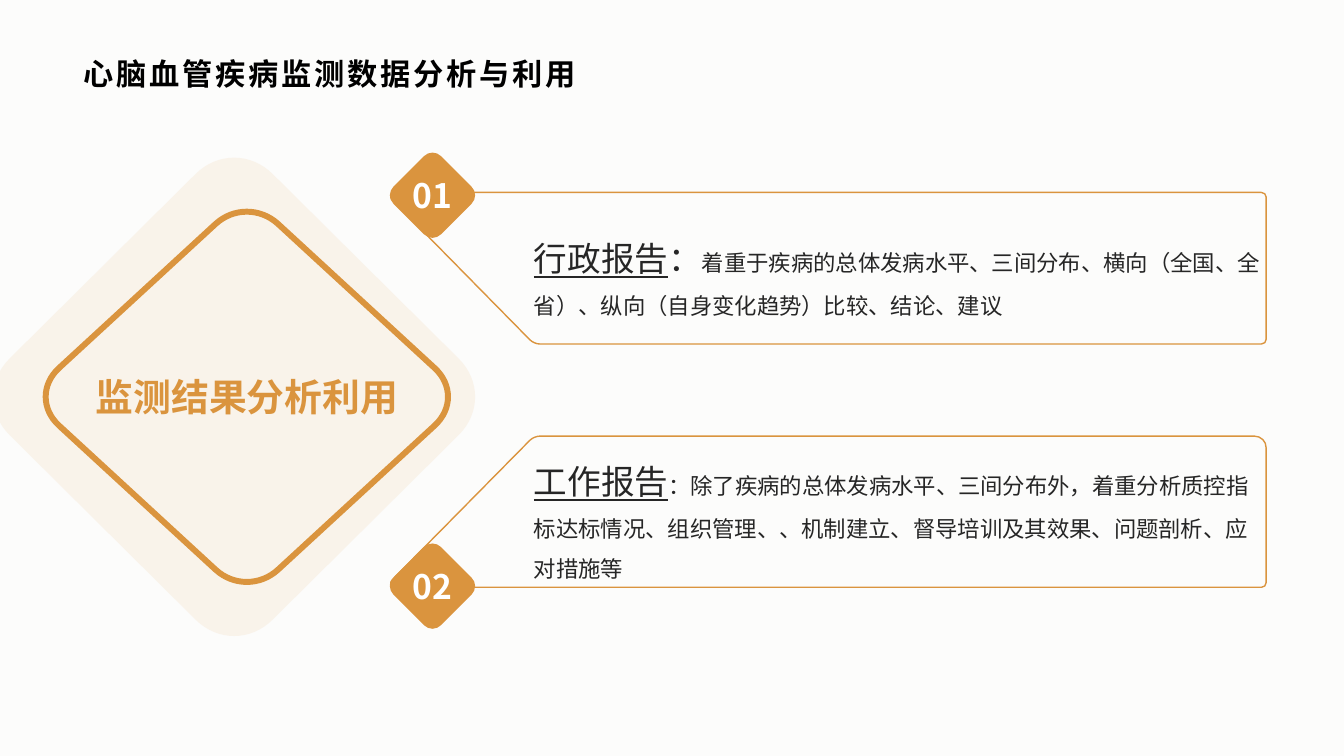
import math
from dataclasses import dataclass

import pptx
import pptx.dml.color
import pptx.enum.text
import pptx.oxml.ns
import pptx.util
from lxml import etree

Cm = pptx.util.Cm
Align = pptx.enum.text.PP_ALIGN
qn = pptx.oxml.ns.qn
COLORS = {"page": "FCFCFB", "accent": "DA943E", "halo": "F4DFC5",
          "title": "000000", "body": "262626", "badge": "FFFFFF"}
CJK_FONT = "Noto Sans CJK SC"
HANDLE = 0.43  # distance of a curve handle from the corner, as a share of the cut


@dataclass
class Corner:
    """Corner of an outline; x, y and the rounded-off length are in cm."""
    x: float
    y: float
    cut: float


@dataclass
class Report:
    number: str
    badge_y: float
    badge_edge: float  # the panel's long edge, beside the badge
    bevel_edge: float  # the panel's short edge
    far_cut: float
    heading: str
    colon_size: float
    text: str


REPORTS = [
    Report("01", 4.92, 4.85, 8.67, 0.12, "行政报告", 24,
           "着重于疾病的总体发病水平、三间分布、横向（全国、全省）、纵向（自身变化趋势）比较、结论、建议"),
    Report("02", 14.77, 14.8, 10.99, 0.3, "工作报告", 16,
           "除了疾病的总体发病水平、三间分布外，着重分析质控指标达标情况、组织管理、、机制建立、"
           "督导培训及其效果、问题剖析、应对措施等"),
]


def rgb(name: str):
    return pptx.dml.color.RGBColor.from_string(COLORS[name])


def toward(corner: Corner, other: Corner, length: float) -> tuple:
    share = length / math.hypot(other.x - corner.x, other.y - corner.y)
    return (Cm(corner.x + (other.x - corner.x) * share),
            Cm(corner.y + (other.y - corner.y) * share))


def corner_curves(corners: list) -> list:
    """Return start, two handles and end of the cubic curve at each corner."""
    curves = []
    for index, corner in enumerate(corners):
        before, after = corners[index - 1], corners[(index + 1) % len(corners)]
        curves.append([toward(corner, before, corner.cut),
                       toward(corner, before, corner.cut * HANDLE),
                       toward(corner, after, corner.cut * HANDLE),
                       toward(corner, after, corner.cut)])
    return curves


def curve_middle(curve: list) -> tuple:
    return tuple(round((a + 3 * b + 3 * c + d) / 8) for a, b, c, d in zip(*curve))


def diamond(x: float, y: float, half_width: float, half_height: float, cut: float) -> list:
    return [Corner(x - half_width, y, cut), Corner(x, y - half_height, cut),
            Corner(x + half_width, y, cut), Corner(x, y + half_height, cut)]


def build_rounded(page, corners: list):
    """Build the outline through the curve middles, then bend it into true curves."""
    curves = corner_curves(corners)
    points = [point for curve in curves for point in (curve[0], curve_middle(curve), curve[3])]
    builder = page.shapes.build_freeform(*points[0])
    builder.add_line_segments(points[1:], close=True)
    shape = builder.convert_to_shape()
    outline = shape._element.spPr.find(".//" + qn("a:path"))
    steps = list(outline)
    for index, curve in enumerate(curves):
        middle, end = steps[3 * index + 1:3 * index + 3]
        bend = etree.Element(qn("a:cubicBezTo"))
        for x, y in curve[1:]:
            etree.SubElement(bend, qn("a:pt"), x=str(x - shape.left), y=str(y - shape.top))
        outline.replace(middle, bend)
        outline.remove(end)
    return shape


def add_outline(page, corners: list, fill: str = "", alpha: int = 100,
                line: str = "", line_width: float = 1):
    shape = build_rounded(page, corners)
    shape.shadow.inherit = False
    if fill:
        shape.fill.solid()
        shape.fill.fore_color.rgb = rgb(fill)
        if alpha < 100:
            color = shape._element.spPr.find(".//" + qn("a:srgbClr"))
            etree.SubElement(color, qn("a:alpha"), val=str(alpha * 1000))
    else:
        shape.fill.background()
    if line:
        shape.line.color.rgb = rgb(line)
        shape.line.width = pptx.util.Pt(line_width)
    else:
        shape.line.fill.background()
    return shape


def set_frame(shape, left: float = 0, right: float = 0, vertical: float = 0,
              wrap: bool = True, align=Align.LEFT, spacing: float = 1.0):
    """Prepare the text frame and return its first paragraph."""
    frame = shape.text_frame
    frame.word_wrap = wrap
    frame.vertical_anchor = pptx.enum.text.MSO_ANCHOR.MIDDLE
    frame.margin_left, frame.margin_right = Cm(left), Cm(right)
    frame.margin_top = frame.margin_bottom = Cm(vertical)
    para = frame.paragraphs[0]
    para.alignment = align
    para.line_spacing = spacing
    return para


def add_text(para, text: str, size: float, color: str, font: str = CJK_FONT,
             bold: bool = False, underline: bool = False, tracking: float = 0) -> None:
    span = para.add_run()
    span.text = text
    span.font.size = pptx.util.Pt(size)
    span.font.name = font
    span.font.bold = bold
    span.font.underline = underline
    span.font.color.rgb = rgb(color)
    properties = span._r.get_or_add_rPr()
    etree.SubElement(properties, qn("a:ea"), typeface=CJK_FONT)
    if tracking:
        properties.set("spc", str(int(tracking * 100)))


def add_panel(page, report: Report) -> None:
    corners = [Corner(9.7, report.badge_edge, 0.3), Corner(31.91, report.badge_edge, 0.12),
               Corner(31.91, report.bevel_edge, report.far_cut),
               Corner(13.46, report.bevel_edge, 0.15)]
    panel = add_outline(page, corners, line="accent")
    para = set_frame(panel, left=3.61, spacing=1.5)
    add_text(para, report.heading, 24, "body", underline=True)
    add_text(para, "：", report.colon_size, "body")
    add_text(para, report.text, 16, "body")


def add_badge(page, report: Report) -> None:
    badge = add_outline(page, diamond(10.9, report.badge_y, 1.2, 1.2, 0.31), fill="accent")
    para = set_frame(badge, wrap=False, align=Align.CENTER)
    add_text(para, report.number, 24, "badge", bold=True)


def main() -> None:
    deck = pptx.Presentation()
    deck.slide_width, deck.slide_height = Cm(33.87), Cm(19.05)
    page = deck.slides.add_slide(deck.slide_layouts[6])
    page.background.fill.solid()
    page.background.fill.fore_color.rgb = rgb("page")

    # Title
    box = page.shapes.add_textbox(Cm(1.86), Cm(1.24), Cm(30.15), Cm(1.22))
    para = set_frame(box, left=0.25, right=0.25, vertical=0.13)
    add_text(para, "心脑血管疾病监测数据分析与利用", 21.6, "title",
             font="Arial", bold=True, tracking=2)

    # Report panels, then their numbers
    for report in REPORTS:
        add_panel(page, report)
    for report in REPORTS:
        add_badge(page, report)

    # Topic diamond
    add_outline(page, diamond(5.9, 10, 6.63, 6.58, 1.37), fill="halo", alpha=30)
    ring = add_outline(page, diamond(6.22, 10, 5.52, 5.08, 1.07), line="accent", line_width=4.25)
    para = set_frame(ring, left=1, right=1, align=Align.CENTER)
    add_text(para, "监测结果分析利用", 27, "accent", bold=True)

    deck.save("out.pptx")


if __name__ == "__main__":
    main()
